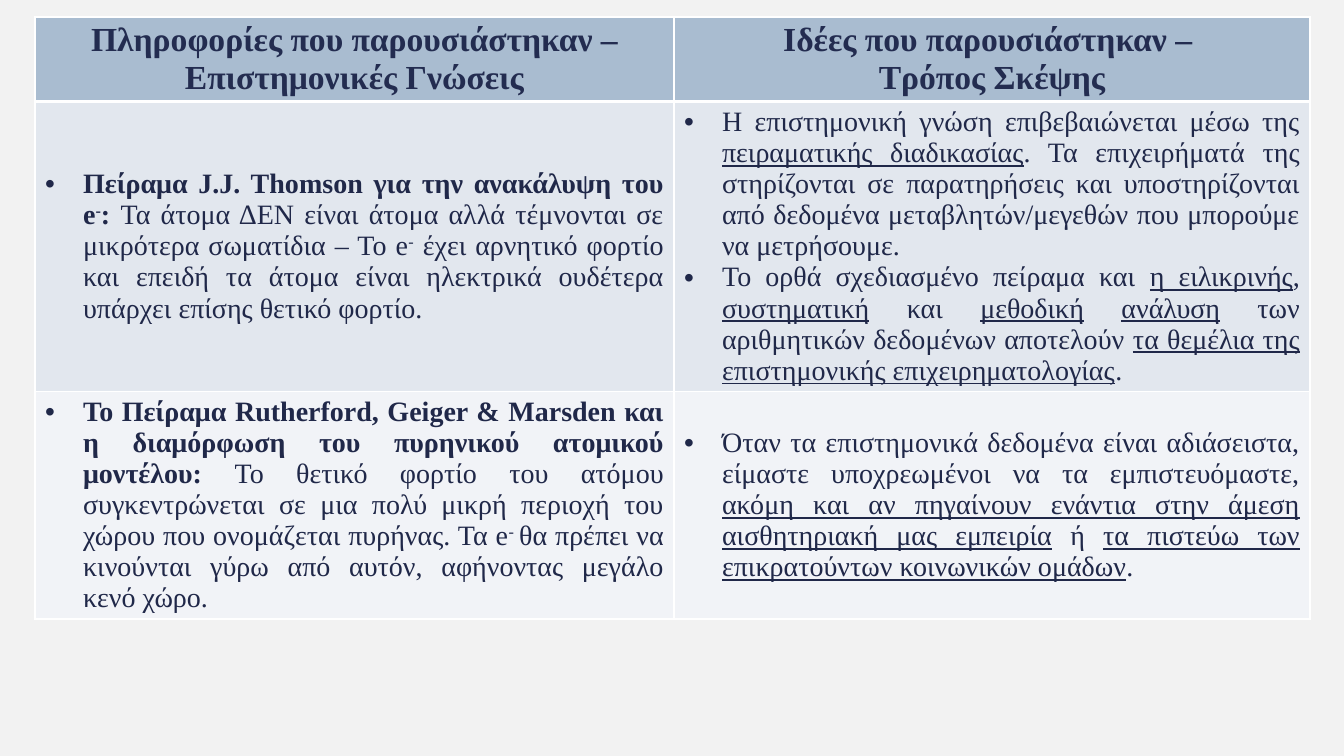
from lxml.etree import SubElement
from pptx import Presentation
from pptx.dml.color import RGBColor
from pptx.enum.text import MSO_ANCHOR as Anchor, PP_ALIGN as Align
from pptx.oxml.ns import qn
from pptx.util import Pt

SCALE = 914400 / 100.8
FONT = "Times New Roman"
HEADER_INK, BODY_INK = "232C50", "202849"
ROW_FILLS = ["A9BCD0", "E2E7EE", "F1F3F7"]
COLUMN_WIDTHS = [639, 636]
ROW_HEIGHTS = [84, 290, 227]
BULLET_INDENT = 38

HEADERS = [
    "Πληροφορίες που παρουσιάστηκαν – Επιστημονικές Γνώσεις",
    "Ιδέες που παρουσιάστηκαν – \nΤρόπος Σκέψης",
]

THOMSON = [
    ("Πείραμα J.J. Thomson για την ανακάλυψη του e", "b"),
    ("-", "b^"),
    (": ", "b"),
    ("Τα άτομα ΔΕΝ είναι άτομα αλλά τέμνονται σε μικρότερα σωματίδια – Το e", ""),
    ("-", "^"),
    (" έχει αρνητικό φορτίο και επειδή τα άτομα είναι ηλεκτρικά ουδέτερα "
     "υπάρχει επίσης θετικό φορτίο.", ""),
]
KNOWLEDGE = [
    ("Η επιστημονική γνώση επιβεβαιώνεται μέσω της ", ""),
    ("πειραματικής διαδικασίας", "u"),
    (". Τα επιχειρήματά της στηρίζονται σε παρατηρήσεις και υποστηρίζονται από "
     "δεδομένα μεταβλητών/μεγεθών που μπορούμε να μετρήσουμε. ", ""),
]
EXPERIMENT = [
    ("Το ορθά σχεδιασμένο πείραμα και ", ""),
    ("η ειλικρινής", "u"),
    (", ", ""),
    ("συστηματική", "u"),
    (" και ", ""),
    ("μεθοδική", "u"),
    (" ", ""),
    ("ανάλυση", "u"),
    (" των αριθμητικών δεδομένων αποτελούν ", ""),
    ("τα θεμέλια της επιστημονικής επιχειρηματολογίας", "u"),
    (".", ""),
]
RUTHERFORD = [
    ("Το Πείραμα Rutherford, Geiger & Marsden και η διαμόρφωση του πυρηνικού "
     "ατομικού μοντέλου: ", "b"),
    ("Το θετικό φορτίο του ατόμου συγκεντρώνεται σε μια πολύ μικρή περιοχή του "
     "χώρου που ονομάζεται πυρήνας. Τα e", ""),
    ("- ", "^"),
    ("θα πρέπει να κινούνται γύρω από αυτόν, αφήνοντας μεγάλο κενό χώρο.", ""),
]
EVIDENCE = [
    ("Όταν τα επιστημονικά δεδομένα είναι αδιάσειστα, είμαστε υποχρεωμένοι να τα "
     "εμπιστευόμαστε, ", ""),
    ("ακόμη και αν πηγαίνουν ενάντια στην άμεση αισθητηριακή μας εμπειρία", "u"),
    (" ή ", ""),
    ("τα πιστεύω των επικρατούντων κοινωνικών ομάδων", "u"),
    (".", ""),
]
BODY = [[[THOMSON], [KNOWLEDGE, EXPERIMENT]], [[RUTHERFORD], [EVIDENCE]]]


def px(length):
    return round(length * SCALE)


def color(value):
    return RGBColor.from_string(value)


def add_text(paragraph, text, size=20, ink=BODY_INK, bold=False, underline=False,
             superscript=False):
    for index, line in enumerate(text.split("\n")):
        if index:
            paragraph.add_line_break()
        run = paragraph.add_run()
        run.text = line
        font = run.font
        font.name, font.size, font.bold, font.underline = FONT, Pt(size), bold, underline
        font.color.rgb = color(ink)
        if superscript:
            run._r.get_or_add_rPr().set("baseline", "30000")


def add_bullet(paragraph):
    properties = paragraph._p.get_or_add_pPr()
    properties.set("marL", str(px(BULLET_INDENT)))
    properties.set("indent", str(-px(BULLET_INDENT)))
    SubElement(properties, qn("a:buFont")).set("typeface", "Arial")
    SubElement(properties, qn("a:buChar")).set("char", "•")


def style_cell(cell, fill, top=1, bottom=1):
    properties = cell._tc.get_or_add_tcPr()
    for side, width in (("L", 1), ("R", 1), ("T", top), ("B", bottom)):
        line = SubElement(properties, qn(f"a:ln{side}"))
        line.set("w", str(Pt(width)))
        solid = SubElement(line, qn("a:solidFill"))
        SubElement(solid, qn("a:srgbClr")).set("val", "FFFFFF")
    cell.fill.solid()
    cell.fill.fore_color.rgb = color(fill)


def fill_header(cell, text):
    style_cell(cell, ROW_FILLS[0], bottom=3)
    paragraph = cell.text_frame.paragraphs[0]
    paragraph.alignment = Align.CENTER
    add_text(paragraph, text, size=24, ink=HEADER_INK, bold=True)


def fill_body(cell, items, row):
    style_cell(cell, ROW_FILLS[row], top=3 if row == 1 else 1)
    cell.vertical_anchor = Anchor.MIDDLE
    frame = cell.text_frame
    for index, item in enumerate(items):
        paragraph = frame.add_paragraph() if index else frame.paragraphs[0]
        paragraph.alignment = Align.JUSTIFY
        add_bullet(paragraph)
        for text, marks in item:
            add_text(paragraph, text, bold="b" in marks, underline="u" in marks,
                     superscript="^" in marks)


def add_comparison(slide, left, top):
    table = slide.shapes.add_table(
        len(ROW_HEIGHTS), len(COLUMN_WIDTHS), px(left), px(top),
        px(sum(COLUMN_WIDTHS)), px(sum(ROW_HEIGHTS))).table
    for column, width in zip(table.columns, COLUMN_WIDTHS):
        column.width = px(width)
    for row, height in zip(table.rows, ROW_HEIGHTS):
        row.height = px(height)
    for column, text in enumerate(HEADERS):
        fill_header(table.cell(0, column), text)
    for row, cells in enumerate(BODY, start=1):
        for column, items in enumerate(cells):
            fill_body(table.cell(row, column), items, row)


def main():
    presentation = Presentation()
    presentation.slide_width, presentation.slide_height = px(1344), px(756)
    slide = presentation.slides.add_slide(presentation.slide_layouts[6])
    slide.background.fill.solid()
    slide.background.fill.fore_color.rgb = color("F2F2F2")
    add_comparison(slide, 35, 17)
    presentation.save("out.pptx")


if __name__ == "__main__":
    main()
